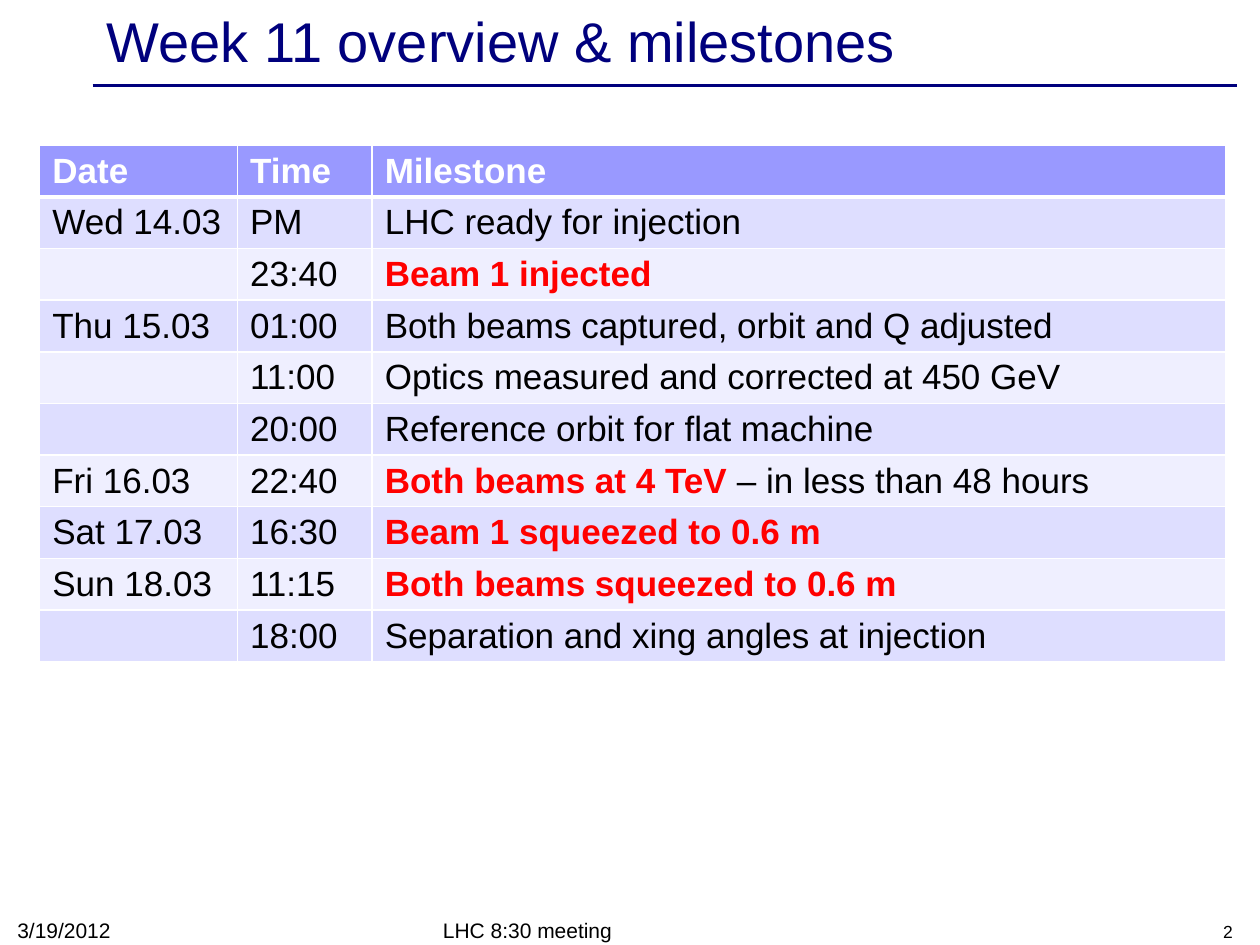
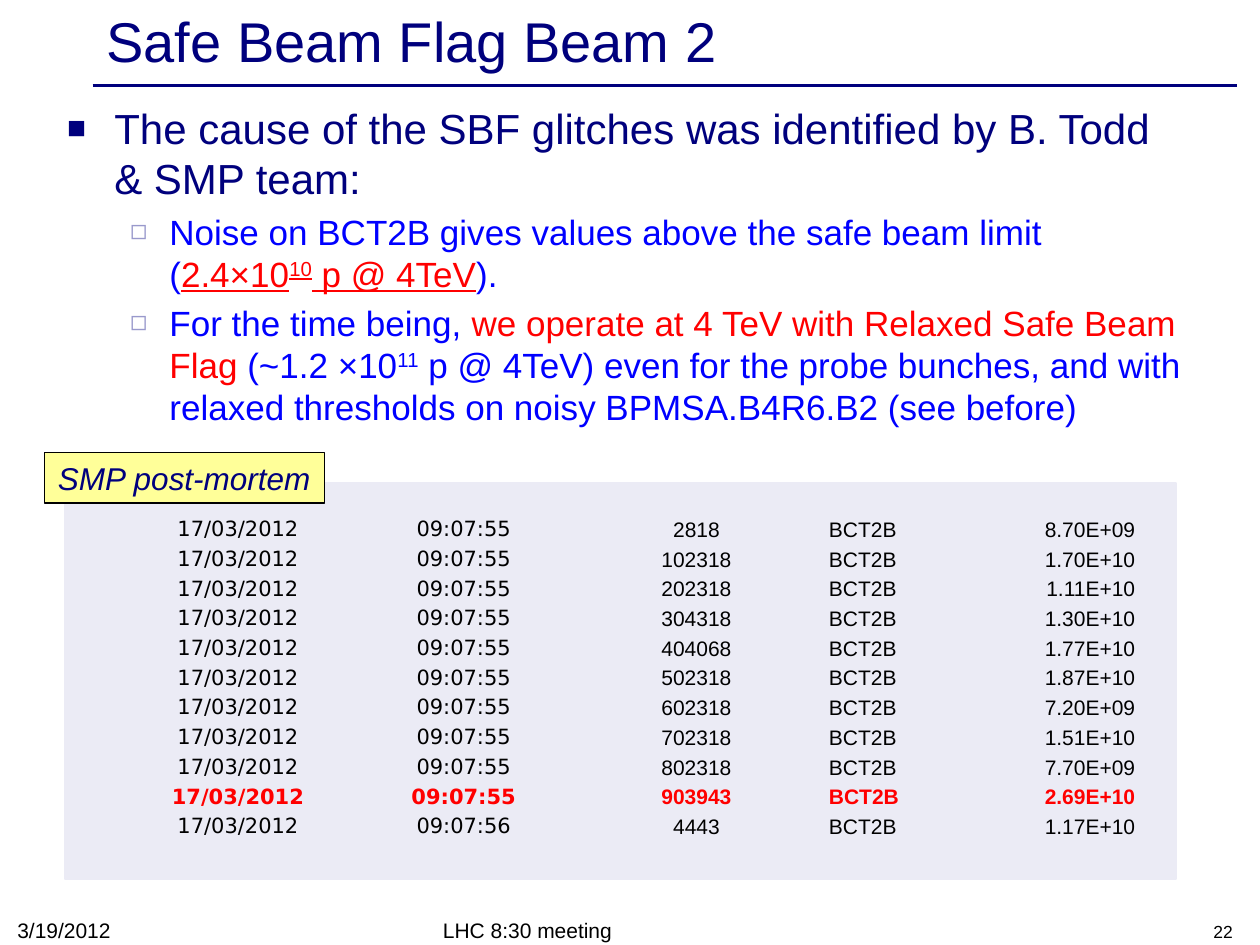
from dataclasses import dataclass
from typing import Any

from lxml.etree import SubElement
from pptx import Presentation
from pptx.dml.color import RGBColor
from pptx.enum.shapes import MSO_CONNECTOR, MSO_SHAPE
from pptx.enum.text import MSO_ANCHOR, PP_ALIGN
from pptx.oxml.ns import qn
from pptx.util import Pt

LEFT, CENTER, RIGHT = PP_ALIGN.LEFT, PP_ALIGN.CENTER, PP_ALIGN.RIGHT


@dataclass(frozen=True)
class Theme:
    navy: str = "00007D"
    blue: str = "0000FF"
    red: str = "FF0000"
    black: str = "000000"
    white: str = "FFFFFF"
    header: str = "9999FF"
    bands: tuple = ("DEDEFF", "EFEFFF")
    panel: str = "EBEBF5"
    label: str = "FFFF99"
    pale_bullet: str = "9999CC"
    font: str = "Arial"
    log_font: str = "DejaVu Sans"
    title_size: int = 32
    lead_size: int = 24
    text_size: int = 20
    label_size: int = 18
    small_size: int = 12
    number_size: int = 10


THEME = Theme()


def write(paragraph, text, align=LEFT, **base):
    """Fill a paragraph from a string or from (string, format changes) pairs."""
    paragraph.alignment = align
    spans = [(text, {})] if isinstance(text, str) else text
    for words, changes in spans:
        look = {"size": THEME.text_size, "color": THEME.black, "font": THEME.font} | base | changes
        run = paragraph.add_run()
        run.text = words
        run.font.size = Pt(look["size"])
        run.font.name = look["font"]
        run.font.color.rgb = RGBColor.from_string(look["color"])
        run.font.bold = look.get("bold", False)
        run.font.italic = look.get("italic", False)
        run.font.underline = look.get("underline", False)
        if look.get("raised"):
            run.font._element.set("baseline", "30000")


def add_bullet(paragraph, char, color, percent, left, hanging):
    properties = paragraph._p.get_or_add_pPr()
    properties.set("marL", str(Pt(left)))
    properties.set("indent", str(-Pt(hanging)))
    tint = SubElement(properties, qn("a:buClr"))
    SubElement(tint, qn("a:srgbClr"), val=color)
    SubElement(properties, qn("a:buSzPct"), val=str(percent * 1000))
    SubElement(properties, qn("a:buFont"), typeface=THEME.font)
    SubElement(properties, qn("a:buChar"), char=char)


def set_borders(cell, left=0, right=0, top=0, bottom=0):
    """Draw white cell borders of the given widths; zero means no line."""
    properties = cell._tc.get_or_add_tcPr()
    for side, width in zip("LRTB", (left, right, top, bottom)):
        border = SubElement(properties, qn(f"a:ln{side}"), w=str(Pt(width)))
        if width:
            paint = SubElement(border, qn("a:solidFill"))
            SubElement(paint, qn("a:srgbClr"), val=THEME.white)
        else:
            SubElement(border, qn("a:noFill"))


@dataclass
class Deck:
    presentation: Any
    theme: Theme = THEME
    slide: Any = None

    def start_slide(self, title, number):
        """Add a slide with its title, rule and footers."""
        theme = self.theme
        self.slide = self.presentation.slides.add_slide(self.presentation.slide_layouts[5])
        heading = self.slide.shapes.title
        heading.left, heading.top, heading.width, heading.height = map(Pt, (53.6, 2.5, 648, 41))
        heading.text_frame.vertical_anchor = MSO_ANCHOR.MIDDLE
        write(heading.text_frame.paragraphs[0], title, size=theme.title_size, color=theme.navy)
        self.rule(53, 49, 707)
        self.footer("3/19/2012", 2.8, 168)
        self.footer("LHC 8:30 meeting", 246, 228)
        self.footer(str(number), 543.5, 168, align=RIGHT, size=theme.number_size)

    def rule(self, start, y, end):
        line = self.slide.shapes.add_connector(
            MSO_CONNECTOR.STRAIGHT, Pt(start), Pt(y), Pt(end), Pt(y))
        line.line.color.rgb = RGBColor.from_string(self.theme.navy)
        line.line.width = Pt(2)
        SubElement(line._element.spPr, qn("a:effectLst"))

    def text_frame(self, left, top, width, height):
        frame = self.slide.shapes.add_textbox(*map(Pt, (left, top, width, height))).text_frame
        frame.word_wrap = True
        return frame

    def footer(self, text, left, width, **look):
        frame = self.text_frame(left, 522, width, 20)
        frame.vertical_anchor = MSO_ANCHOR.BOTTOM
        write(frame.paragraphs[0], text, **{"size": self.theme.small_size} | look)

    def bullets(self, items, left, top, width, height):
        """Write (level, text) items as a two-level list."""
        theme = self.theme
        levels = (
            (("■", theme.navy, 75, 27, 27), theme.lead_size, theme.navy),
            (("◻", theme.pale_bullet, 80, 58.5, 22.5), theme.text_size, theme.blue),
        )
        frame = self.text_frame(left, top, width, height)
        for index, (level, text) in enumerate(items):
            paragraph = frame.add_paragraph() if index else frame.paragraphs[0]
            bullet, size, color = levels[level]
            add_bullet(paragraph, *bullet)
            paragraph.level = level
            paragraph.space_before = Pt(0.2 * size if index else 0)
            write(paragraph, text, size=size, color=color)

    def box(self, left, top, width, height, fill, line, line_width, text=None, **look):
        shape = self.slide.shapes.add_shape(
            MSO_SHAPE.RECTANGLE, *map(Pt, (left, top, width, height)))
        shape.shadow.inherit = False
        shape.fill.solid()
        shape.fill.fore_color.rgb = RGBColor.from_string(fill)
        shape.line.color.rgb = RGBColor.from_string(line)
        shape.line.width = Pt(line_width)
        if text:
            shape.text_frame.word_wrap = False
            write(shape.text_frame.paragraphs[0], text, **look)

    def grid(self, left, top, columns, row_height, row_count):
        """Add an empty table without banding."""
        table = self.slide.shapes.add_table(
            row_count, len(columns), Pt(left), Pt(top),
            Pt(sum(columns)), Pt(row_height * row_count)).table
        table.first_row = table.horz_banding = False
        for column, width in zip(table.columns, columns):
            column.width = Pt(width)
        for row in table.rows:
            row.height = Pt(row_height)
        return table

    def banded_table(self, rows, left, top, columns, row_height):
        theme = self.theme
        table = self.grid(left, top, columns, row_height, len(rows))
        for r, row in enumerate(rows):
            fill = theme.bands[(r - 1) % 2] if r else theme.header
            look = {} if r else {"color": theme.white, "bold": True}
            for c, text in enumerate(row):
                cell = table.cell(r, c)
                set_borders(cell, 1, 1, 3 if r == 1 else 1, 1 if r else 3)
                cell.fill.solid()
                cell.fill.fore_color.rgb = RGBColor.from_string(fill)
                cell.margin_bottom = Pt(1)
                if text:
                    write(cell.text_frame.paragraphs[0], text, **look)

    def log_table(self, rows, alarm_row, left, top, columns, row_height):
        """Add a plain table whose alarm row is bold red."""
        theme = self.theme
        fonts = (theme.log_font,) * 2 + (theme.font,) * 3
        aligns = (CENTER, CENTER, CENTER, LEFT, RIGHT)
        table = self.grid(left, top, columns, row_height, len(rows))
        for r, row in enumerate(rows):
            look = {"color": theme.red, "bold": True} if r == alarm_row else {}
            for c, (text, font, align) in enumerate(zip(row, fonts, aligns)):
                cell = table.cell(r, c)
                set_borders(cell)
                cell.fill.background()
                cell.vertical_anchor = MSO_ANCHOR.BOTTOM
                cell.margin_left = cell.margin_right = Pt(0.75)
                cell.margin_top = cell.margin_bottom = 0
                write(cell.text_frame.paragraphs[0], text, align=align,
                      size=theme.small_size, font=font, **look)


def build_overview(deck):
    key = {"color": THEME.red, "bold": True}
    milestones = [
        ("Date", "Time", "Milestone"),
        ("Wed 14.03", "PM", "LHC ready for injection"),
        ("", "23:40", [("Beam 1 injected", key)]),
        ("Thu 15.03", "01:00", "Both beams captured, orbit and Q adjusted"),
        ("", "11:00", "Optics measured and corrected at 450 GeV"),
        ("", "20:00", "Reference orbit for flat machine"),
        ("Fri 16.03", "22:40",
         [("Both beams at 4 TeV ", key), ("– in less than 48 hours", {})]),
        ("Sat 17.03", "16:30", [("Beam 1 squeezed to 0.6 m", key)]),
        ("Sun 18.03", "11:15", [("Both beams squeezed to 0.6 m", key)]),
        ("", "18:00", "Separation and xing angles at injection"),
    ]
    deck.start_slide("Week 11 overview & milestones", 2)
    deck.banded_table(milestones, 22.7, 83, (113, 77, 487.5), 29.52)


def build_safe_beam_flag(deck):
    red = {"color": THEME.red}
    limit = red | {"underline": True}
    raised = {"raised": True}
    findings = [
        (0, "The cause of the SBF glitches was identified by B. Todd & SMP team:"),
        (1, [("Noise on BCT2B gives values above the safe beam limit (", {}),
             ("2.4×10", limit), ("10", limit | raised), (" p @ 4TeV", limit), (").", {})]),
        (1, [("For the time being, ", {}),
             ("we operate at 4 TeV with Relaxed Safe Beam Flag", red),
             (" (~1.2 ×10", {}), ("11", raised),
             (" p @ 4TeV) even for the probe bunches, and with relaxed thresholds "
              "on noisy BPMSA.B4R6.B2 (see before)", {})]),
    ]
    readings = [
        ("55", "2818", "8.70E+09"),
        ("55", "102318", "1.70E+10"),
        ("55", "202318", "1.11E+10"),
        ("55", "304318", "1.30E+10"),
        ("55", "404068", "1.77E+10"),
        ("55", "502318", "1.87E+10"),
        ("55", "602318", "7.20E+09"),
        ("55", "702318", "1.51E+10"),
        ("55", "802318", "7.70E+09"),
        ("55", "903943", "2.69E+10"),
        ("56", "4443", "1.17E+10"),
    ]
    log = [("17/03/2012", f"09:07:{second}", microsecond, "BCT2B", intensity)
           for second, microsecond, intensity in readings]
    deck.start_slide("Safe Beam Flag Beam 2", 22)
    deck.box(37, 276, 635, 226.5, THEME.panel, THEME.panel, 1)
    deck.bullets(findings, 31.2, 55, 652, 232)
    deck.log_table(log, 9, 65, 292.6, (142, 116, 150, 103, 73.5), 17)
    deck.box(25.3, 258.4, 160, 29, THEME.label, THEME.black, 0.75, "SMP post-mortem",
             align=CENTER, size=THEME.label_size, color=THEME.navy, italic=True)


def main():
    presentation = Presentation()
    presentation.slide_width, presentation.slide_height = Pt(720), Pt(540)
    deck = Deck(presentation)
    build_overview(deck)
    build_safe_beam_flag(deck)
    presentation.save("out.pptx")


if __name__ == "__main__":
    main()
